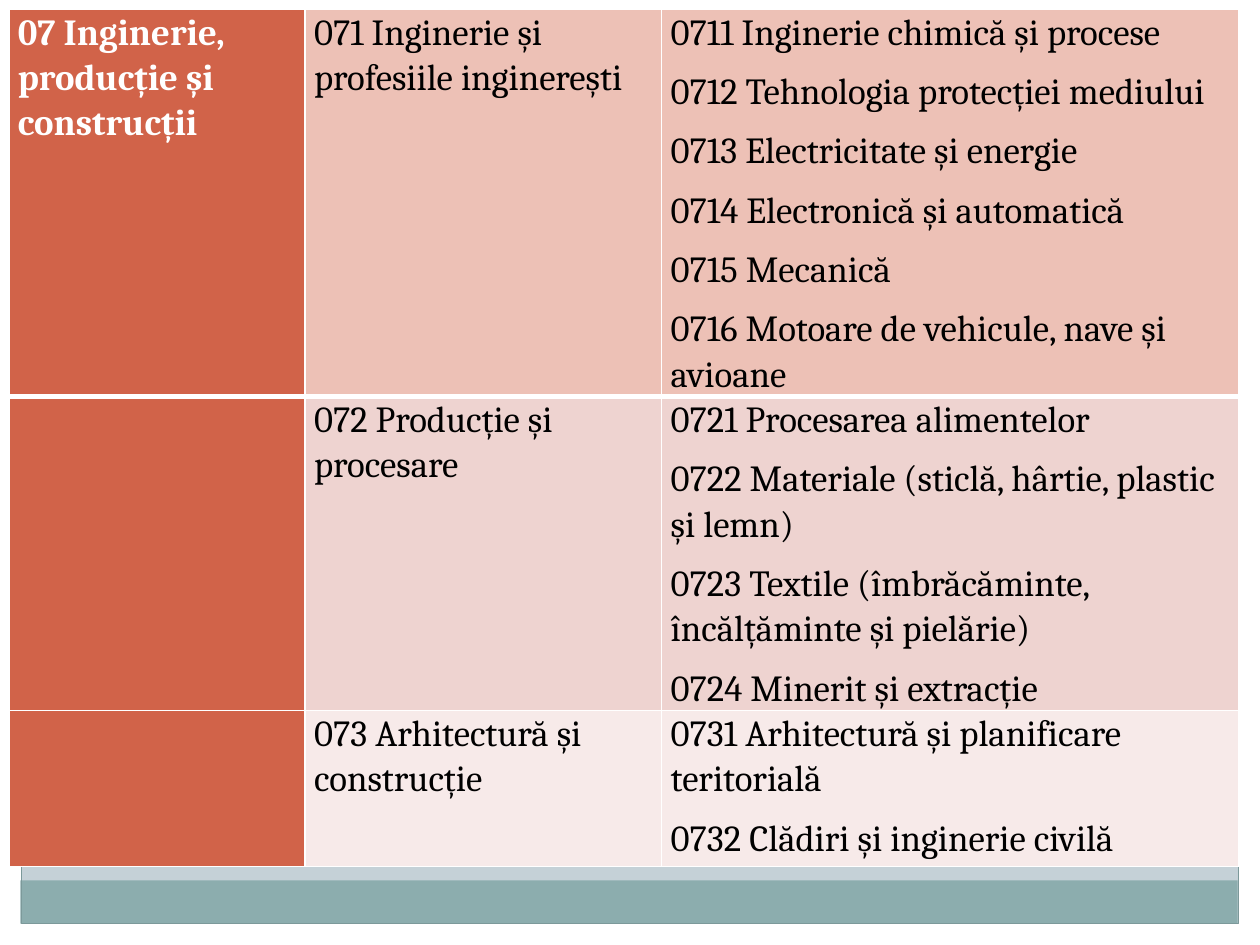
from lxml import etree
from pptx import Presentation
from pptx.dml.color import RGBColor
from pptx.enum import shapes
from pptx.oxml import ns
from pptx.util import Cm, Pt

WHITE = RGBColor(0xFF, 0xFF, 0xFF)
BLACK = RGBColor(0, 0, 0)
BACKGROUND = RGBColor(0xC5, 0xD1, 0xD7)
TEAL = RGBColor(0x8C, 0xAD, 0xAE)
FRAME_LINE = RGBColor(0x7C, 0x99, 0x9A)
BRICK = RGBColor(0xD1, 0x63, 0x49)
SALMON = RGBColor(0xED, 0xC1, 0xB6)
ROSE = RGBColor(0xEE, 0xD3, 0xD0)
BLUSH = RGBColor(0xF7, 0xEA, 0xE9)

COLUMN_WIDTHS = [5.97, 7.19, 11.63]
FIELDS = [
    (7.24, SALMON, [
        ["07 Inginerie, producție și construcții"],
        ["071 Inginerie și profesiile inginerești"],
        ["0711 Inginerie chimică și procese",
         "0712 Tehnologia protecției mediului",
         "0713 Electricitate și energie",
         "0714 Electronică și automatică",
         "0715 Mecanică",
         "0716 Motoare de vehicule, nave și avioane"]]),
    (5.82, ROSE, [
        [],
        ["072 Producție și procesare"],
        ["0721 Procesarea alimentelor",
         "0722 Materiale (sticlă, hârtie, plastic și lemn)",
         "0723 Textile (îmbrăcăminte, încălțăminte și pielărie)",
         "0724 Minerit și extracție"]]),
    (3.15, BLUSH, [
        [],
        ["073 Arhitectură și construcție"],
        ["0731 Arhitectură și planificare teritorială",
         "0732 Clădiri și inginerie civilă"]]),
]


def add_rectangle(left, top, width, height, fill=None, line=None):
    rectangle = slide.shapes.add_shape(
        shapes.MSO_SHAPE.RECTANGLE, Cm(left), Cm(top), Cm(width), Cm(height))
    rectangle.shadow.inherit = False
    for part, color in ((rectangle.fill, fill), (rectangle.line.fill, line)):
        if color is None:
            part.background()
        else:
            part.solid()
            part.fore_color.rgb = color
    if line is not None:
        rectangle.line.width = Pt(0.75)


def add_borders(cell, bottom_width):
    """Draw white borders; they must come before the fill in the cell's XML."""
    properties = cell._tc.get_or_add_tcPr()
    for side, width in (("L", 1), ("R", 1), ("T", 1), ("B", bottom_width)):
        border = etree.SubElement(properties, ns.qn(f"a:ln{side}"), w=str(Pt(width)))
        paint = etree.SubElement(border, ns.qn("a:solidFill"))
        etree.SubElement(paint, ns.qn("a:srgbClr"), val=str(WHITE))


prs = Presentation()
prs.slide_width, prs.slide_height = Cm(25.4), Cm(19.05)
slide = prs.slides.add_slide(prs.slide_layouts[6])
slide.background.fill.solid()
slide.background.fill.fore_color.rgb = BACKGROUND

# White margins, footer band and frame
for margin in ((0, 18.62, 25.4, 0.43), (0, 0, 25.4, 3.86),
               (0, 0, 0.43, 19.05), (24.97, 0, 0.43, 19.05)):
    add_rectangle(*margin, fill=WHITE)
add_rectangle(0.41, 17.75, 24.54, 0.87, fill=TEAL)
add_rectangle(0.43, 0.43, 24.54, 18.19, line=FRAME_LINE)

# Table of study fields
table = slide.shapes.add_table(
    len(FIELDS), len(COLUMN_WIDTHS), Cm(0.18), Cm(0.18),
    Cm(sum(COLUMN_WIDTHS)), Cm(sum(field[0] for field in FIELDS))).table
for column, width in zip(table.columns, COLUMN_WIDTHS):
    column.width = Cm(width)

for row_index, (height, tint, entries) in enumerate(FIELDS):
    table.rows[row_index].height = Cm(height)
    for column_index, lines in enumerate(entries):
        cell = table.cell(row_index, column_index)
        is_broad_field = column_index == 0
        cell.margin_left = cell.margin_right = Cm(0.18)
        cell.margin_top = cell.margin_bottom = 0
        add_borders(cell, 3 if row_index == 0 else 1)
        cell.fill.solid()
        cell.fill.fore_color.rgb = BRICK if is_broad_field else tint
        if not lines:
            continue
        cell.text = "\n".join(lines)
        for paragraph in cell.text_frame.paragraphs:
            paragraph.line_spacing = 1.07
            paragraph.space_after = Pt(8)
            paragraph.font.name = "Cambria"
            paragraph.font.size = Pt(21)
            paragraph.font.bold = is_broad_field
            paragraph.font.color.rgb = WHITE if is_broad_field else BLACK

prs.save("out.pptx")
